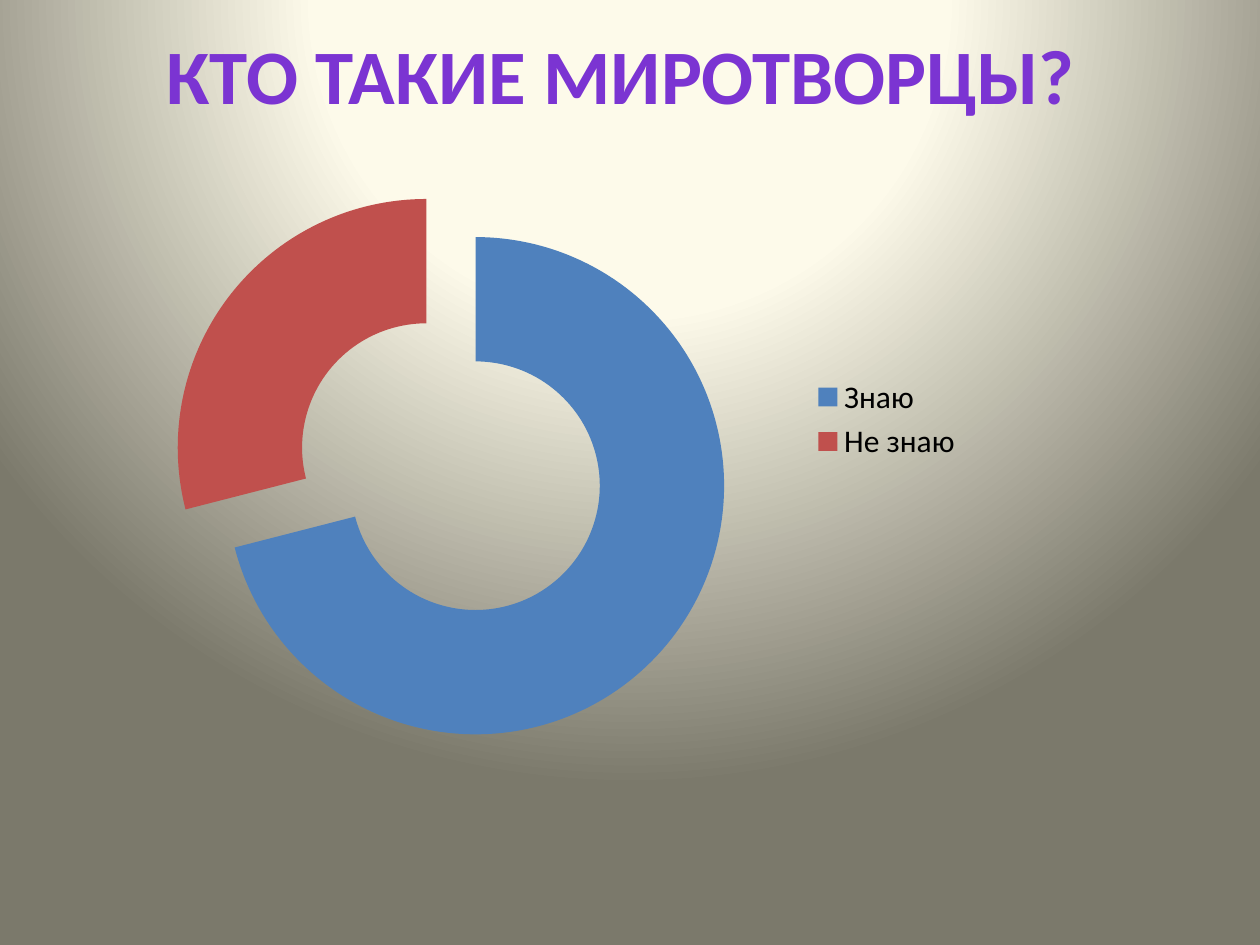
from lxml.etree import SubElement
from pptx import Presentation
from pptx.chart.data import CategoryChartData
from pptx.dml.color import RGBColor
from pptx.enum.chart import XL_CHART_TYPE, XL_LEGEND_POSITION
from pptx.enum.text import MSO_ANCHOR, PP_ALIGN
from pptx.oxml import parse_xml
from pptx.oxml.ns import nsdecls, qn
from pptx.util import Cm, Pt


def color(value):
    return RGBColor.from_string(value)


def write(box, text, size, fill, bold=False, align=PP_ALIGN.CENTER):
    frame = box.text_frame
    frame.word_wrap = True
    frame.vertical_anchor = MSO_ANCHOR.MIDDLE
    para = frame.paragraphs[0]
    para.alignment = align
    span = para.add_run()
    span.text = text
    span.font.name = "Calibri"
    span.font.size = Pt(size)
    span.font.bold = bold
    span.font.color.rgb = color(fill)


deck = Presentation()
deck.slide_width, deck.slide_height = Cm(25.4), Cm(19.05)
page = deck.slides.add_slide(deck.slide_layouts[6])

# Background: round gradient centred above the top edge
page.background.fill.solid()
stops = [(0, "FDFAEA"), (40, "FDFAEA"), (100, "7B796B")]
stop_xml = "".join(
    f'<a:gs pos="{place * 1000}"><a:srgbClr val="{value}"/></a:gs>'
    for place, value in stops
)
gradient = parse_xml(
    f'<a:gradFill {nsdecls("a")} rotWithShape="1"><a:gsLst>{stop_xml}</a:gsLst>'
    '<a:path path="circle">'
    '<a:fillToRect l="50000" t="-80000" r="50000" b="180000"/>'
    "</a:path></a:gradFill>"
)
background = page.element.xpath(".//p:bgPr")[0]
background.replace(background[0], gradient)

# Title
title = page.shapes.add_textbox(Cm(1.9), Cm(0.4), Cm(21.6), Cm(2.18))
write(title, "КТО ТАКИЕ МИРОТВОРЦЫ? ", size=44, fill="7B34D2", bold=True)

# Doughnut chart
answers = [("Знаю", 71, "4F81BD"), ("Не знаю", 29, "C0504D")]
data = CategoryChartData()
data.categories = [name for name, _, _ in answers]
data.add_series("Series 1", [share for _, share, _ in answers])
chart = page.shapes.add_chart(
    XL_CHART_TYPE.DOUGHNUT_EXPLODED, Cm(2.57), Cm(3.77), Cm(16.94), Cm(11.28), data
).chart
chart.has_title = False
chart.font.name = "Calibri"
chart.font.size = Pt(18)
chart.font.color.rgb = color("000000")
chart.has_legend = True
chart.legend.position = XL_LEGEND_POSITION.RIGHT
chart.legend.include_in_layout = False

plot = chart.plots[0]
plot.vary_by_categories = True
series = plot.series[0]
for index, (_, _, fill) in enumerate(answers):
    point = series.points[index].format
    point.fill.solid()
    point.fill.fore_color.rgb = color(fill)
    point.line.fill.background()

# Slice gap and hole size
for old in series._element.findall(qn("c:explosion")):
    series._element.remove(old)
explosion = parse_xml(f'<c:explosion {nsdecls("c")} val="25"/>')
series._element.find(qn("c:dPt")).addprevious(explosion)
plot._element.find(qn("c:holeSize")).set("val", "50")

# Plot area on the left, legend beside it, above the middle
area = chart._chartSpace.find(".//" + qn("c:plotArea"))
legend = chart.legend._element
edges = {"xMode": "edge", "yMode": "edge"}
places = [
    (area, 0, {"layoutTarget": "inner", **edges, "x": 0, "y": 0, "w": 0.77, "h": 1}),
    (legend, 1, {**edges, "x": 0.81, "y": 0.33}),
]
for part, index, settings in places:
    for old in part.findall(qn("c:layout")):
        part.remove(old)
    layout = parse_xml(f'<c:layout {nsdecls("c")}/>')
    manual = SubElement(layout, qn("c:manualLayout"))
    for name, value in settings.items():
        SubElement(manual, qn(f"c:{name}")).set("val", str(value))
    part.insert(index, layout)

deck.save("out.pptx")
